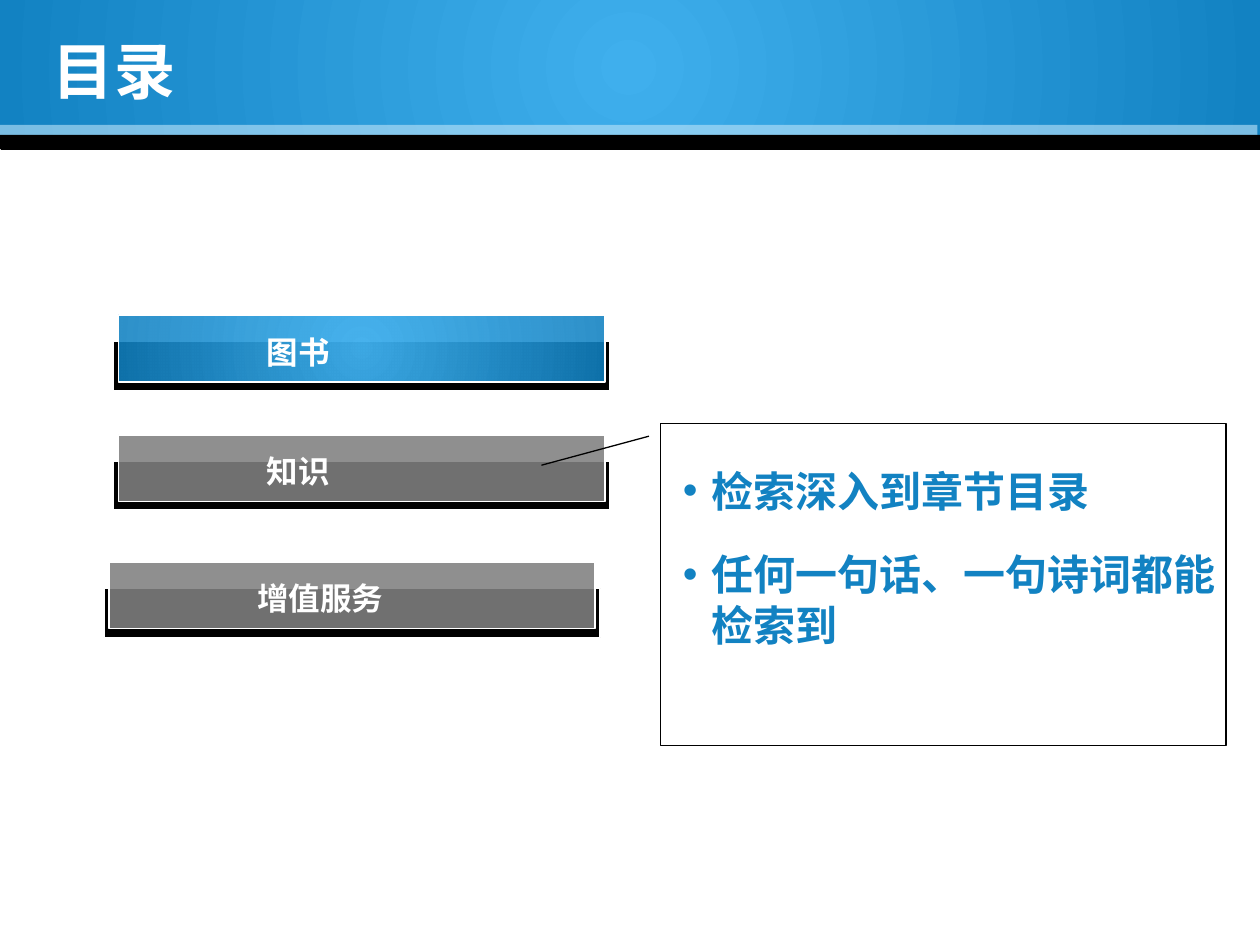
"""Build a contents slide with three buttons and a callout on the second."""
from dataclasses import dataclass

from lxml import etree
from pptx import Presentation
from pptx.dml.color import RGBColor
from pptx.enum.shapes import MSO_SHAPE
from pptx.enum.text import MSO_ANCHOR, MSO_AUTO_SIZE, PP_ALIGN
from pptx.oxml.ns import qn
from pptx.util import Inches, Pt

RECT = MSO_SHAPE.RECTANGLE
SNIP = MSO_SHAPE.SNIP_1_RECTANGLE
CALL = MSO_SHAPE.LINE_CALLOUT_1
LEFT = PP_ALIGN.LEFT
MID, TOP = MSO_ANCHOR.MIDDLE, MSO_ANCHOR.TOP
FIXED = MSO_AUTO_SIZE.NONE


@dataclass(frozen=True)
class Theme:
    light: str = "3FAFED"
    blue: str = "1282C2"
    pale: str = "BAE2F8"
    gray: str = "808080"
    black: str = "000000"
    white: str = "FFFFFF"
    head: int = 35
    list: int = 24
    label: int = 18
    lead: int = 29


T = Theme()
CELL = Inches(0.1)
COLS, ROWS = 100, 75

TITLE = "目录"
POINTS = ["检索深入到章节目录", "任何一句话、一句诗词都能检索到"]
GLOW = [(T.light, 100), (T.blue, 100)]
GLASS = [(T.light, 96), (T.blue, 88)]
GRAY = [(T.gray, 88)]
BLACK = [(T.black, 100)]
BANDS = [
    (RECT, (-0.2, 0, 100.2, 10.7), GLOW, 0),
    (RECT, (-0.2, 9.9, 100, 0.8), [(T.pale, 62)], 0),
    (SNIP, (-0.1, 10.7, 100.1, 1.2), BLACK, 180),
]
BUTTONS = [
    ("图书", 9, 25, GLASS),
    ("知识", 9, 34.5, GRAY),
    ("增值服务", 8.25, 44.6, GRAY),
]
TITLE_BOX = (3.2, 2.1, 90, 6.9)
LIST_BOX = (53.2, 34.5, 44.9, 17.3)
CALL_BOX = (52.4, 33.6, 44.9, 25.6)
CALL_ADJ = (0.04, -0.02, 0.13, -0.21)


def grid(*cells):
    return [round(c * CELL) for c in cells]


def tint(color, rgb, node, alpha):
    color.rgb = RGBColor.from_string(rgb)
    if alpha < 100:
        mark = next(node.iter(qn("a:srgbClr")))
        etree.SubElement(mark, qn("a:alpha"), val=str(alpha * 1000))


def paint(shape, tones):
    fill = shape.fill
    props = shape.element.spPr
    if len(tones) == 1:
        fill.solid()
        tint(fill.fore_color, tones[0][0], props, tones[0][1])
        return
    fill.gradient()
    nodes = list(props.iter(qn("a:gs")))
    for stop, node, tone in zip(fill.gradient_stops, nodes, tones):
        tint(stop.color, tone[0], node, tone[1])
    lin = next(props.iter(qn("a:lin")))
    ring = etree.Element(qn("a:path"), path="circle")
    half = dict.fromkeys("ltrb", "50000")
    etree.SubElement(ring, qn("a:fillToRect"), half)
    lin.getparent().replace(lin, ring)


def draw(shapes, kind, box, tones=None, line=None, width=1):
    shape = shapes.add_shape(kind, *grid(*box))
    shape.shadow.inherit = False
    if tones:
        paint(shape, tones)
    else:
        shape.fill.background()
    if line:
        shape.line.color.rgb = RGBColor.from_string(line)
        shape.line.width = Pt(width)
    else:
        shape.line.fill.background()
    return shape


def write(para, text, size, face, rgb):
    para.alignment = LEFT
    run = para.add_run()
    run.text = text
    font = run.font
    font.size, font.name, font.bold = Pt(size), face, True
    font.color.rgb = RGBColor.from_string(rgb)


def place(shape, box, anchor):
    shape.left, shape.top, shape.width, shape.height = grid(*box)
    frame = shape.text_frame
    frame.word_wrap = True
    frame.auto_size = FIXED
    frame.vertical_anchor = anchor
    return frame


def add_button(shapes, text, x, y, tones):
    parts = shapes.add_group_shape().shapes
    draw(parts, RECT, (x, y + 2.1, 39.4, 3.9), BLACK, T.white)
    draw(parts, RECT, (x + 0.4, y, 38.6, 5.3), tones, T.white)
    box = (x + 11.2, y + 0.9, 17, 4)
    label = parts.add_textbox(*grid(*box))
    frame = place(label, box, TOP)
    write(frame.paragraphs[0], text, T.label, "Calibri", T.white)


def add_list(body):
    frame = place(body, LIST_BOX, TOP)
    frame.margin_top = Inches(0.24)
    for i, text in enumerate(POINTS):
        para = frame.add_paragraph() if i else frame.paragraphs[0]
        para.line_spacing = Pt(T.lead)
        para.space_before = Pt(18.5 if i else 0)
        write(para, text, T.list, "Arial", T.blue)
        props = para.element.get_or_add_pPr() if hasattr(para, "element") else para._p.get_or_add_pPr()
        props.set("marL", str(Inches(0.23)))
        props.set("indent", str(-Inches(0.23)))
        etree.SubElement(props, qn("a:buFont"), typeface="Arial")
        etree.SubElement(props, qn("a:buChar"), char="•")


def main():
    deck = Presentation()
    deck.slide_width, deck.slide_height = grid(COLS, ROWS)
    slide = deck.slides.add_slide(deck.slide_layouts[1])
    shapes = slide.shapes
    tree = shapes.element
    title, body = slide.placeholders
    for kind, box, tones, turn in BANDS:
        draw(shapes, kind, box, tones).rotation = turn
    tree.append(title.element)
    frame = place(title, TITLE_BOX, MID)
    write(frame.paragraphs[0], TITLE, T.head, "Noto Sans CJK SC", T.white)
    for button in BUTTONS:
        add_button(shapes, *button)
    tree.append(body.element)
    add_list(body)
    call = draw(shapes, CALL, CALL_BOX, line=T.black, width=0.75)
    for i, share in enumerate(CALL_ADJ):
        call.adjustments[i] = share
    deck.save("out.pptx")


if __name__ == "__main__":
    main()
